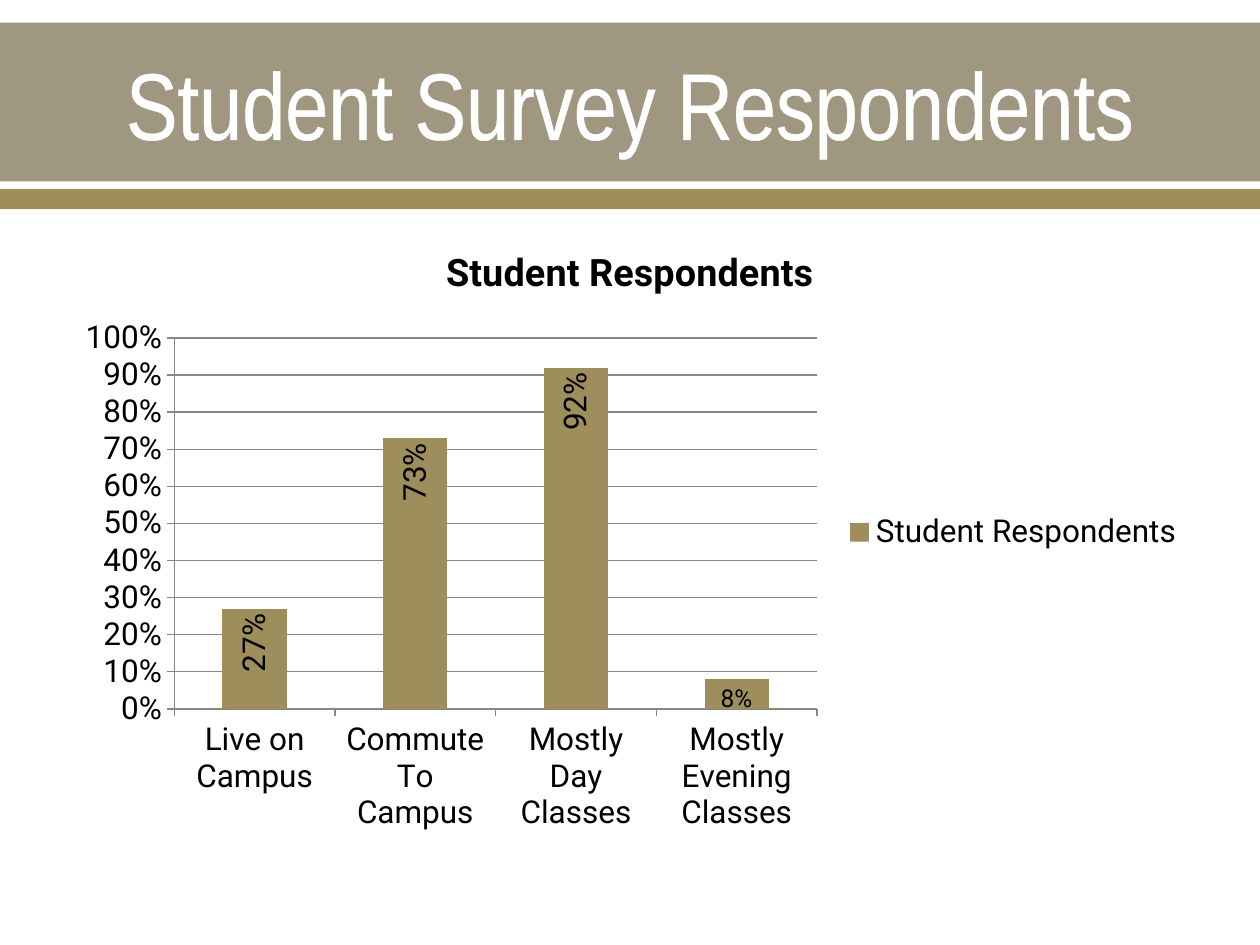
from dataclasses import dataclass

from lxml.etree import SubElement
from pptx import Presentation
from pptx.chart.data import CategoryChartData
from pptx.dml.color import RGBColor
from pptx.enum.chart import (XL_CHART_TYPE, XL_LABEL_POSITION,
                             XL_LEGEND_POSITION, XL_TICK_MARK)
from pptx.enum.shapes import MSO_SHAPE
from pptx.enum.text import MSO_ANCHOR, PP_ALIGN
from pptx.oxml.ns import qn
from pptx.util import Inches, Pt


@dataclass(frozen=True)
class Theme:
    band: RGBColor = RGBColor(0xA0, 0x97, 0x81)
    accent: RGBColor = RGBColor(0x9E, 0x8E, 0x5C)
    white: RGBColor = RGBColor(0xFF, 0xFF, 0xFF)
    black: RGBColor = RGBColor(0, 0, 0)
    grid: RGBColor = RGBColor(0x86, 0x86, 0x86)
    title_font: str = "Arial Narrow"
    body_font: str = "Roboto"
    title_size: Pt = Pt(54)
    chart_title_size: Pt = Pt(21.6)
    body_size: Pt = Pt(18)
    small_size: Pt = Pt(14)


THEME = Theme()
SERIES = "Student Respondents"
RESPONDENTS = {
    "Live on Campus": 0.27,
    "Commute To Campus": 0.73,
    "Mostly Day Classes": 0.92,
    "Mostly Evening Classes": 0.08,
}


def add_band(s, top, height, color):
    """Full-width bar placed behind the title."""
    sp = s.shapes.add_shape(MSO_SHAPE.RECTANGLE, 0, Inches(top),
                            Inches(10), Inches(height))
    sp.shadow.inherit = False
    sp.fill.solid()
    sp.fill.fore_color.rgb = color
    sp.line.fill.background()
    s.shapes.title.element.addprevious(sp.element)


def outline_text(r, color, width):
    ln = SubElement(r.font._element, qn("a:ln"), w=str(width))
    fill = SubElement(ln, qn("a:solidFill"))
    SubElement(fill, qn("a:srgbClr"), val=str(color))
    r.font._element.insert(0, ln)


def set_title(s, text):
    sp = s.shapes.title
    sp.left, sp.top = Inches(0.5), Inches(0.2)
    sp.width, sp.height = Inches(9), Inches(1.22)
    tf = sp.text_frame
    tf.vertical_anchor = MSO_ANCHOR.MIDDLE
    p = tf.paragraphs[0]
    p.alignment = PP_ALIGN.CENTER
    r = p.add_run()
    r.text = text
    r.font.name = THEME.title_font
    r.font.size = THEME.title_size
    r.font.color.rgb = THEME.white
    outline_text(r, THEME.white, Pt(1.1))


def style_font(font, size, bold=False):
    font.name = THEME.body_font
    font.size = size
    font.bold = bold
    font.color.rgb = THEME.black


def style_axes(chart):
    for axis in (chart.category_axis, chart.value_axis):
        axis.major_tick_mark = XL_TICK_MARK.OUTSIDE
        axis.minor_tick_mark = XL_TICK_MARK.NONE
        axis.format.line.color.rgb = THEME.grid
    axis = chart.value_axis
    axis.minimum_scale, axis.maximum_scale, axis.major_unit = 0, 1, 0.1
    axis.has_major_gridlines = True
    axis.major_gridlines.format.line.color.rgb = THEME.grid
    axis.tick_labels.number_format = "0%"
    axis.tick_labels.number_format_is_linked = False


def label_bars(series):
    # Vertical labels inside the bars
    labels = series.data_labels
    labels.show_value = True
    labels.number_format = "0%"
    labels.number_format_is_linked = False
    labels.position = XL_LABEL_POSITION.INSIDE_END
    style_font(labels.font, THEME.body_size)
    body = labels._element.find(qn("c:txPr")).find(qn("a:bodyPr"))
    body.set("rot", "-5400000")
    body.set("vert", "horz")

    # The shortest bar has a small horizontal label
    label = series.points[3].data_label
    tf = label.text_frame
    r = tf.paragraphs[0].add_run()
    r.text = "8%"
    style_font(r.font, THEME.small_size)
    tf._txBody.find(qn("a:bodyPr")).set("rot", "0")
    label.position = XL_LABEL_POSITION.INSIDE_END


def add_respondents_chart(s):
    data = CategoryChartData(number_format="0%")
    data.categories = list(RESPONDENTS)
    data.add_series(SERIES, list(RESPONDENTS.values()))
    chart = s.shapes.add_chart(XL_CHART_TYPE.COLUMN_CLUSTERED, Inches(0.5),
                               Inches(1.75), Inches(9), Inches(4.95),
                               data).chart
    style_font(chart.font, THEME.body_size)

    # Chart title and legend
    chart.has_title = True
    r = chart.chart_title.text_frame.paragraphs[0].add_run()
    r.text = SERIES
    style_font(r.font, THEME.chart_title_size, bold=True)
    chart.chart_title.include_in_layout = False
    chart.has_legend = True
    chart.legend.position = XL_LEGEND_POSITION.RIGHT
    chart.legend.include_in_layout = False

    # Columns
    plot = chart.plots[0]
    plot.gap_width = 150
    plot.vary_by_categories = False
    series = plot.series[0]
    series.format.fill.solid()
    series.format.fill.fore_color.rgb = THEME.accent
    style_axes(chart)
    label_bars(series)


def main():
    prs = Presentation()
    prs.slide_width, prs.slide_height = Inches(10), Inches(7.5)
    s = prs.slides.add_slide(prs.slide_layouts[5])
    add_band(s, 0.18, 1.26, THEME.band)
    add_band(s, 1.5, 0.16, THEME.accent)
    set_title(s, "Student Survey Respondents")
    add_respondents_chart(s)
    prs.save("out.pptx")


if __name__ == "__main__":
    main()
